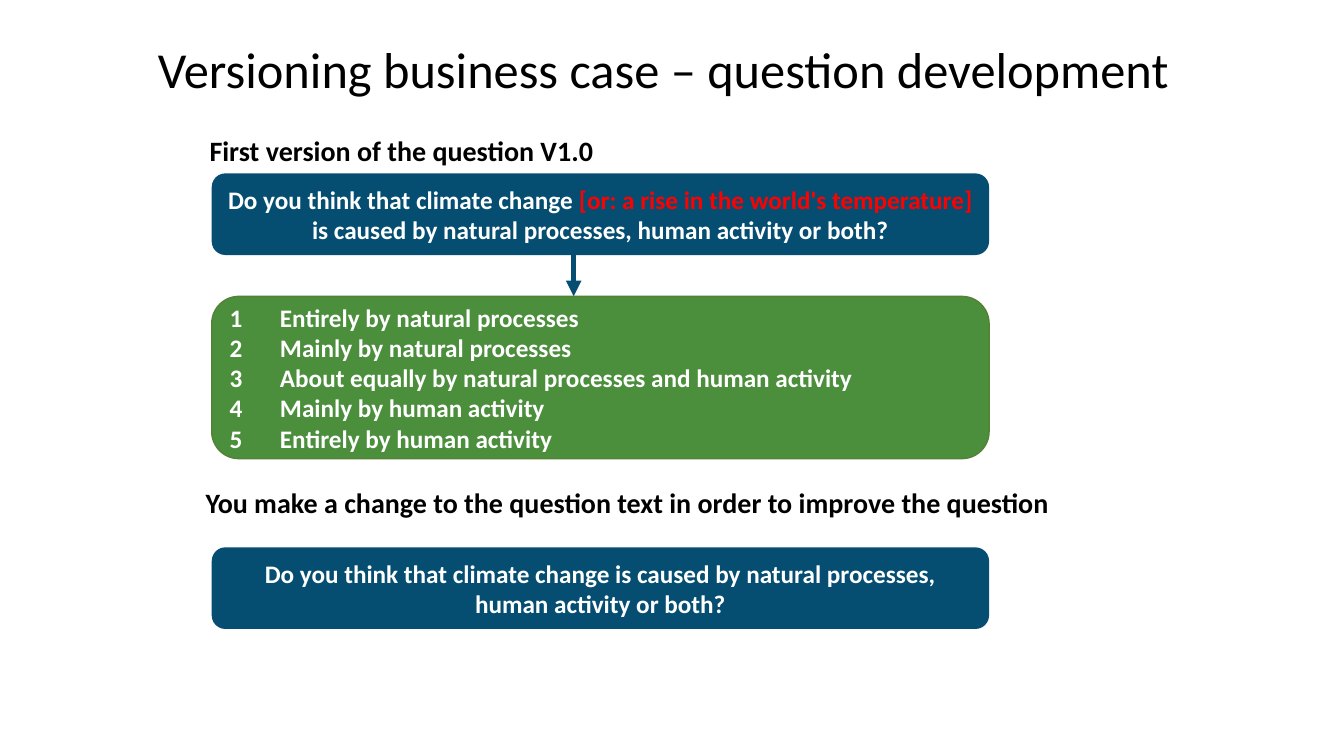
from pptx import Presentation
from pptx.util import Inches, Pt
from pptx.dml.color import RGBColor
from pptx.enum.shapes import MSO_SHAPE as Shape, MSO_CONNECTOR as Link
from pptx.enum.text import PP_ALIGN as Align, MSO_ANCHOR as Anchor
from pptx.oxml.ns import qn
from lxml.etree import SubElement as Sub

BLACK = RGBColor(0x00, 0x00, 0x00)
WHITE = RGBColor(0xFF, 0xFF, 0xFF)
RED = RGBColor(0xFF, 0x00, 0x00)
BLUE = RGBColor(0x05, 0x4E, 0x72)
GREEN = RGBColor(0x4B, 0x8E, 0x3C)
EDGE = RGBColor(0x54, 0x82, 0x35)


def write(shape, paras, size=18, color=WHITE, bold=True, align=Align.LEFT,
          anchor=Anchor.MIDDLE, wrap=True, space=1.0):
    frame = shape.text_frame
    frame.word_wrap = wrap
    frame.vertical_anchor = anchor
    for i, runs in enumerate(paras):
        para = frame.paragraphs[0] if i == 0 else frame.add_paragraph()
        para.alignment = align
        para.line_spacing = space
        for text, tint in runs:
            run = para.add_run()
            run.text = text
            run.font.name = "Calibri"
            run.font.size = Pt(size)
            run.font.bold = bold
            run.font.color.rgb = tint or color


deck = Presentation()
deck.slide_width = Inches(13.33)
deck.slide_height = Inches(7.5)
slide = deck.slides.add_slide(deck.slide_layouts[6])
shapes = slide.shapes

arrow = shapes.add_connector(Link.STRAIGHT, Inches(5.69), Inches(2.13),
                             Inches(5.69), Inches(2.94))
arrow.line.color.rgb = BLUE
arrow.line.width = Pt(3.75)
Sub(arrow.line._get_or_add_ln(), qn("a:tailEnd"), type="triangle")
Sub(arrow._element.spPr, qn("a:effectLst"))

title = shapes.add_textbox(Inches(0.49), Inches(-0.06), Inches(12.18), Inches(1.1))
write(title, [[("Versioning business case – question development", None)]],
      size=36, color=BLACK, bold=False, align=Align.CENTER,
      anchor=Anchor.BOTTOM, space=0.9)

labels = [
    (1.98, 1.28, 4.04, "First version of the question V1.0"),
    (1.94, 4.77, 8.83,
     "You make a change to the question text in order to improve the question"),
]
for left, top, width, text in labels:
    label = shapes.add_textbox(Inches(left), Inches(top), Inches(width), Inches(0.44))
    write(label, [[(text, None)]], size=20, color=BLACK, anchor=Anchor.TOP, wrap=False)

answers = [
    "Entirely by natural processes",
    "Mainly by natural processes",
    "About equally by natural processes and human activity",
    "Mainly by human activity",
    "Entirely by human activity",
]
first = [
    ("Do you think that climate change ", None),
    ("[or: a rise in the world's temperature] ", RED),
    ("is caused by natural processes, human activity or both?", None),
]
second = [("Do you think that climate change is caused by natural processes, "
           "human activity or both?", None)]
choices = [[(f"{n}\t{text}", None)] for n, text in enumerate(answers, 1)]

boxes = [
    (2.94, 1.61, GREEN, EDGE, Align.LEFT, choices),
    (1.72, 0.81, BLUE, None, Align.CENTER, [first]),
    (5.43, 0.81, BLUE, None, Align.CENTER, [second]),
]
for top, height, fill, edge, align, paras in boxes:
    box = shapes.add_shape(Shape.ROUNDED_RECTANGLE, Inches(2.1), Inches(top),
                           Inches(7.71), Inches(height))
    box.shadow.inherit = False
    box.fill.solid()
    box.fill.fore_color.rgb = fill
    if edge:
        box.line.color.rgb = edge
        box.line.width = Pt(1)
    else:
        box.line.fill.background()
    write(box, paras, align=align)

deck.save("out.pptx")
